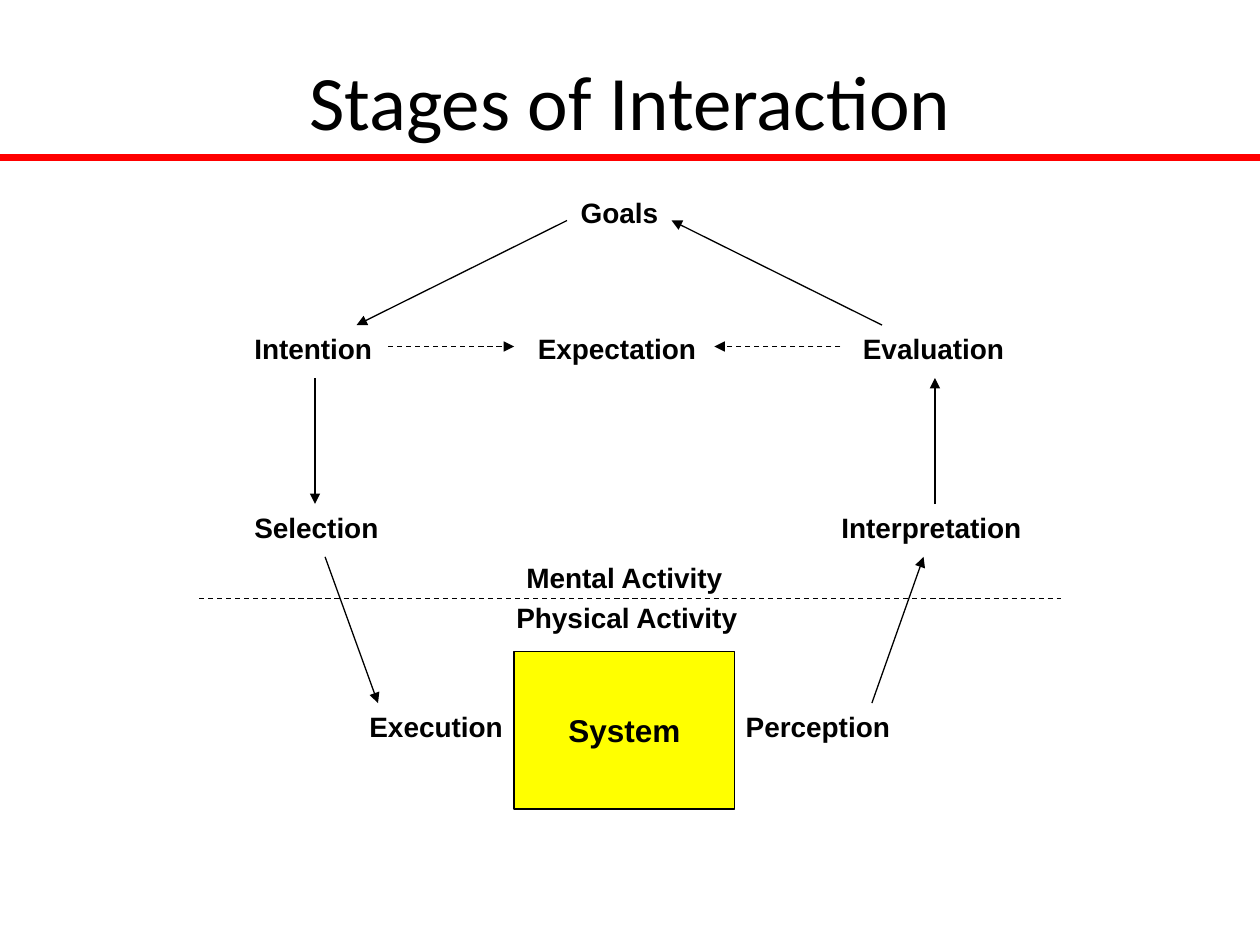
import pptx
import pptx.util
from lxml import etree
from pptx.dml.color import RGBColor
from pptx.enum.dml import MSO_LINE
from pptx.enum.shapes import MSO_CONNECTOR, MSO_SHAPE
from pptx.enum.text import MSO_ANCHOR, MSO_AUTO_SIZE, PP_ALIGN
from pptx.oxml.ns import qn
from pptx.util import Inches, Pt

BLACK = RGBColor(0x00, 0x00, 0x00)
RED = RGBColor(0xFF, 0x00, 0x00)
YELLOW = RGBColor(0xFF, 0xFF, 0x00)

TITLE = "Stages of Interaction"
LABEL_HEIGHT = 0.37

# Text, left, top, width
LABELS = [
    ("Goals", 4.51, 1.5, 0.82),
    ("Intention", 1.92, 2.58, 1.14),
    ("Expectation", 4.17, 2.58, 1.46),
    ("Evaluation", 6.75, 2.58, 1.32),
    ("Selection", 1.92, 4, 1.19),
    ("Interpretation", 6.58, 4, 1.64),
    ("Mental Activity", 4.08, 4.4, 1.77),
    ("Physical Activity", 4, 4.72, 1.97),
]
# Text, left, top, width, alignment
SYSTEM_SIDES = [
    ("Execution", 2.83, 5.58, 1.26, PP_ALIGN.RIGHT),
    ("Perception", 5.82, 5.58, 1.43, PP_ALIGN.LEFT),
]
# Start, end
STAGE_ARROWS = [
    ((4.5, 1.75), (2.83, 2.58)),
    ((2.5, 3), (2.5, 4)),
    ((2.58, 4.42), (3, 5.58)),
    ((6.92, 5.58), (7.33, 4.42)),
    ((7.42, 4), (7.42, 3)),
    ((7, 2.58), (5.33, 1.75)),
]
EXPECTATION_ARROWS = [
    ((3.08, 2.75), (4.08, 2.75)),
    ((6.67, 2.75), (5.67, 2.75)),
]
ACTIVITY_DIVIDER = ((1.58, 4.75), (8.42, 4.75))
TITLE_RULE = ((0, 1.25), (10, 1.25))


def set_text(shape, text, size, font="Arial", bold=True, alignment=PP_ALIGN.LEFT):
    shape.text_frame.text = text
    paragraph = shape.text_frame.paragraphs[0]
    paragraph.alignment = alignment
    run_font = paragraph.runs[0].font
    run_font.name = font
    run_font.size = Pt(size)
    run_font.bold = bold
    run_font.color.rgb = BLACK


def add_label(slide, text, left, top, width, alignment=PP_ALIGN.LEFT, wrap=False):
    label = slide.shapes.add_textbox(
        Inches(left), Inches(top), Inches(width), Inches(LABEL_HEIGHT))
    label.text_frame.word_wrap = wrap
    label.text_frame.auto_size = MSO_AUTO_SIZE.SHAPE_TO_FIT_TEXT
    set_text(label, text, 16, alignment=alignment)


def add_line(slide, start, end, color=BLACK, width=0.75, dashed=False, arrow=False):
    connector = slide.shapes.add_connector(
        MSO_CONNECTOR.STRAIGHT, *(Inches(value) for value in start + end))
    connector.line.color.rgb = color
    connector.line.width = Pt(width)
    if dashed:
        connector.line.dash_style = MSO_LINE.DASH
    if arrow:
        etree.SubElement(connector.line._get_or_add_ln(), qn("a:tailEnd"), type="triangle")
    etree.SubElement(connector._element.spPr, qn("a:effectLst"))


def add_system_box(slide):
    box = slide.shapes.add_shape(
        MSO_SHAPE.RECTANGLE, Inches(4.08), Inches(5.17), Inches(1.75), Inches(1.25))
    box.shadow.inherit = False
    box.fill.solid()
    box.fill.fore_color.rgb = YELLOW
    box.line.color.rgb = BLACK
    box.line.width = Pt(0.75)
    box.text_frame.word_wrap = False
    box.text_frame.vertical_anchor = MSO_ANCHOR.MIDDLE
    set_text(box, "System", 18, alignment=PP_ALIGN.CENTER)


def main():
    presentation = pptx.Presentation()
    presentation.slide_width = Inches(10)
    presentation.slide_height = Inches(7.5)
    slide = presentation.slides.add_slide(
        presentation.slide_layouts.get_by_name("Title Only"))

    title = slide.shapes.title
    title.left, title.top = Inches(0.75), Inches(0.17)
    title.width, title.height = Inches(8.5), Inches(1.25)
    title.text_frame.vertical_anchor = MSO_ANCHOR.MIDDLE
    set_text(title, TITLE, 44, font="Calibri", bold=False, alignment=PP_ALIGN.CENTER)

    for label in LABELS:
        add_label(slide, *label)
    add_system_box(slide)
    for side in SYSTEM_SIDES:
        add_label(slide, *side, wrap=True)

    for start, end in STAGE_ARROWS:
        add_line(slide, start, end, arrow=True)
    for start, end in EXPECTATION_ARROWS:
        add_line(slide, start, end, dashed=True, arrow=True)
    add_line(slide, *ACTIVITY_DIVIDER, dashed=True)
    add_line(slide, *TITLE_RULE, color=RED, width=3.5)

    presentation.save("out.pptx")


if __name__ == "__main__":
    main()
